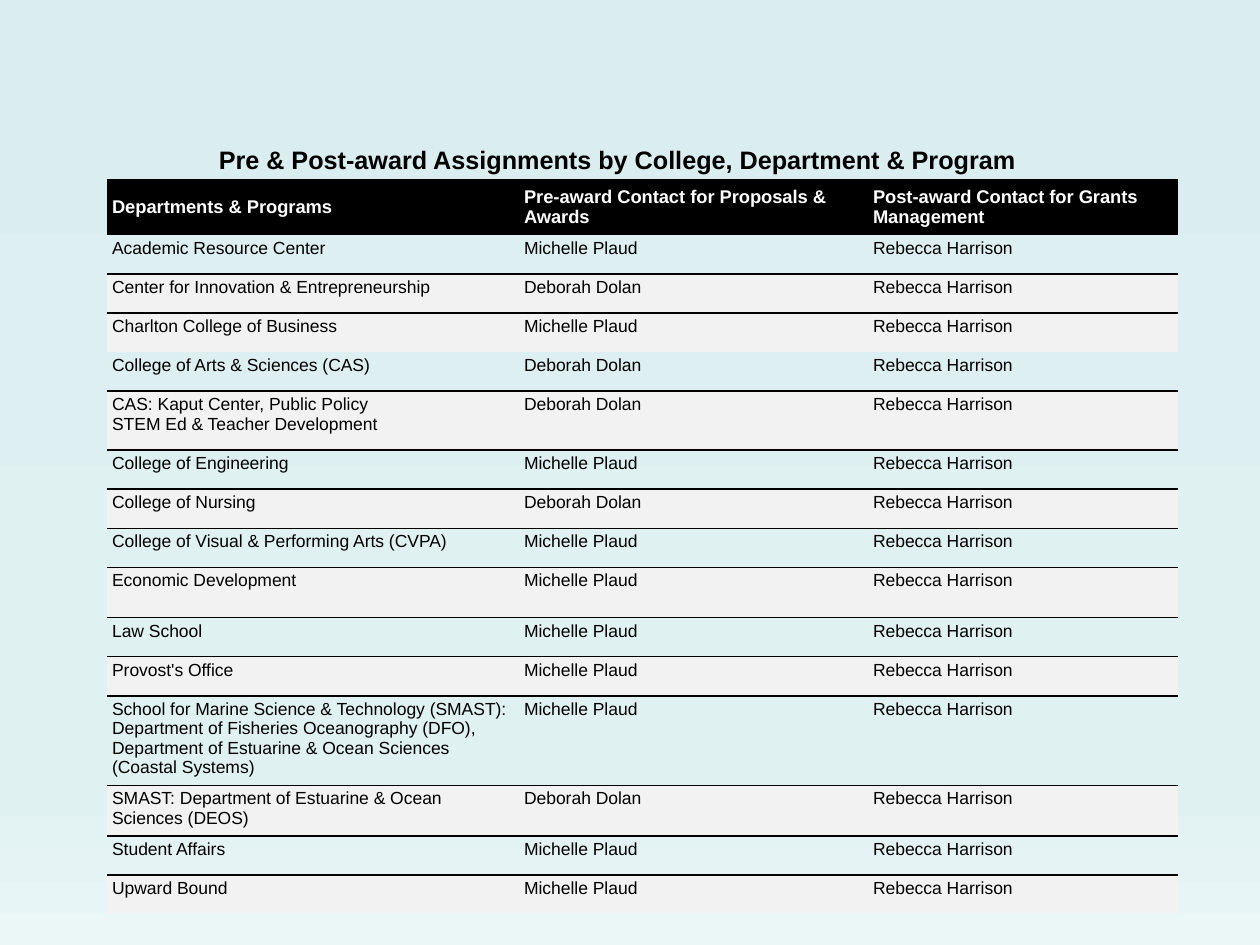
from lxml import etree
from pptx import Presentation
from pptx.dml.color import RGBColor
from pptx.enum import text
from pptx.oxml.ns import qn
from pptx.util import Inches, Pt

BLACK = RGBColor(0x00, 0x00, 0x00)
WHITE = RGBColor(0xFF, 0xFF, 0xFF)
GRAY = RGBColor(0xF2, 0xF2, 0xF2)
BG_STOPS = [
    (0, RGBColor(0xDA, 0xED, 0xEF)),
    (74, RGBColor(0xE0, 0xF1, 0xF2)),
    (83, RGBColor(0xE0, 0xF1, 0xF2)),
    (100, RGBColor(0xEB, 0xF6, 0xF7)),
]
NO_STYLE = "{2D5ABB26-0587-4C30-8999-92F81FD0307C}"
TITLE_FONT = {"name": "Arial", "size": Pt(14.4), "bold": True}
HEAD_FONT = {"name": "Arial", "size": Pt(10.5), "bold": True}
BODY_FONT = {"name": "Arial", "size": Pt(10), "bold": False}

HEADER = ("Departments & Programs", "Pre-award Contact for Proposals & Awards",
          "Post-award Contact for Grants Management")
MP, DD, POST_AWARD = "Michelle Plaud", "Deborah Dolan", "Rebecca Harrison"
DEPARTMENTS = [
    ("Academic Resource Center", MP, 0.31, False),
    ("Center for Innovation & Entrepreneurship", DD, 0.31, True),
    ("Charlton College of Business", MP, 0.31, True),
    ("College of Arts & Sciences (CAS)", DD, 0.31, False),
    ("CAS: Kaput Center, Public Policy\vSTEM Ed & Teacher Development", DD, 0.47, True),
    ("College of Engineering", MP, 0.31, False),
    ("College of Nursing", DD, 0.31, True),
    ("College of Visual & Performing Arts (CVPA)", MP, 0.31, False),
    ("Economic Development", MP, 0.4, True),
    ("Law School", MP, 0.31, False),
    ("Provost's Office", MP, 0.31, True),
    ("School for Marine Science & Technology (SMAST): Department of Fisheries "
     "Oceanography (DFO),\nDepartment of Estuarine & Ocean Sciences (Coastal Systems)",
     MP, 0.71, False),
    ("SMAST: Department of Estuarine & Ocean Sciences (DEOS)", DD, 0.4, True),
    ("Student Affairs", MP, 0.31, False),
    ("Upward Bound", MP, 0.3, True),
]


def set_font(tf, fmt, color):
    for p in tf.paragraphs:
        for r in p.runs:
            for key, value in fmt.items():
                setattr(r.font, key, value)
            r.font.color.rgb = color


def add_top_border(cell):
    ln = etree.Element(qn("a:lnT"), w=str(Pt(1)))
    fill = etree.SubElement(ln, qn("a:solidFill"))
    etree.SubElement(fill, qn("a:srgbClr"), val=str(BLACK))
    cell._tc.get_or_add_tcPr().insert(0, ln)


prs = Presentation()
prs.slide_width, prs.slide_height = Inches(10), Inches(7.5)
s = prs.slides.add_slide(prs.slide_layouts[5])

bg = s.background.fill
bg.gradient()
bg.gradient_angle = 270
stops = s.element.find(".//" + qn("a:gsLst"))
for old in list(stops):
    stops.remove(old)
for pos, color in BG_STOPS:
    gs = etree.SubElement(stops, qn("a:gs"), pos=str(pos * 1000))
    etree.SubElement(gs, qn("a:srgbClr"), val=str(color))

title = s.shapes.title
title.left, title.top = Inches(0.65), Inches(1.17)
title.width, title.height = Inches(8.5), Inches(0.5)
tf = title.text_frame
tf.text = "Pre & Post-award Assignments by College, Department & Program"
frame = {"margin_top": 0, "margin_bottom": 0, "word_wrap": True,
         "vertical_anchor": text.MSO_ANCHOR.TOP, "auto_size": text.MSO_AUTO_SIZE.NONE}
for key, value in frame.items():
    setattr(tf, key, value)
tf.paragraphs[0].alignment = text.PP_ALIGN.CENTER
tf.paragraphs[0].line_spacing = 0.9
set_font(tf, TITLE_FONT, BLACK)

heights = [0.44] + [height for _, _, height, _ in DEPARTMENTS]
shape = s.shapes.add_table(len(heights), 3, Inches(0.85), Inches(1.42),
                           Inches(8.5), Inches(sum(heights)))
table = shape.table
table.horz_banding = False
shape._element.find(".//" + qn("a:tableStyleId")).text = NO_STYLE
for col, width in zip(table.columns, (3.27, 2.77, 2.46)):
    col.width = Inches(width)
for row, height in zip(table.rows, heights):
    row.height = Inches(height)

rows = [(HEADER, BLACK)]
rows += [((name, pre, POST_AWARD), GRAY if shaded else None)
         for name, pre, _, shaded in DEPARTMENTS]
previous = None
for i, (values, fill) in enumerate(rows):
    head = i == 0
    for j, value in enumerate(values):
        cell = table.cell(i, j)
        cell.text = value
        layout = {"margin_left": Inches(0.04), "margin_right": Inches(0.03),
                  "margin_top": Inches(0.06 if head else 0.03),
                  "margin_bottom": Inches(0.06),
                  "vertical_anchor": text.MSO_ANCHOR.MIDDLE if head else text.MSO_ANCHOR.TOP}
        for key, setting in layout.items():
            setattr(cell, key, setting)
        set_font(cell.text_frame, HEAD_FONT if head else BODY_FONT, WHITE if head else BLACK)
        if fill is None:
            cell.fill.background()
        else:
            cell.fill.solid()
            cell.fill.fore_color.rgb = fill
        if fill == GRAY and previous is None:
            add_top_border(cell)
    previous = fill

prs.save("out.pptx")
